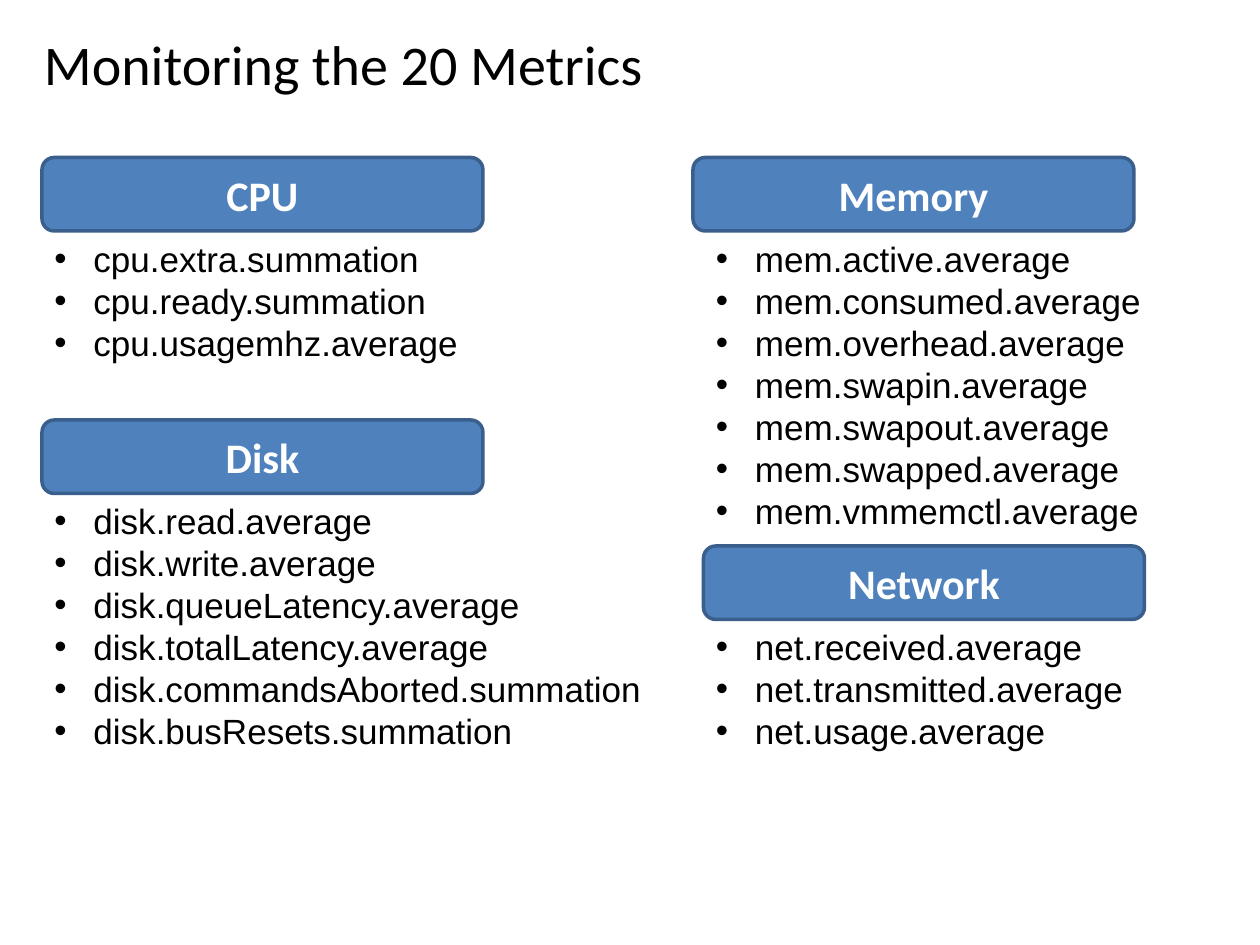
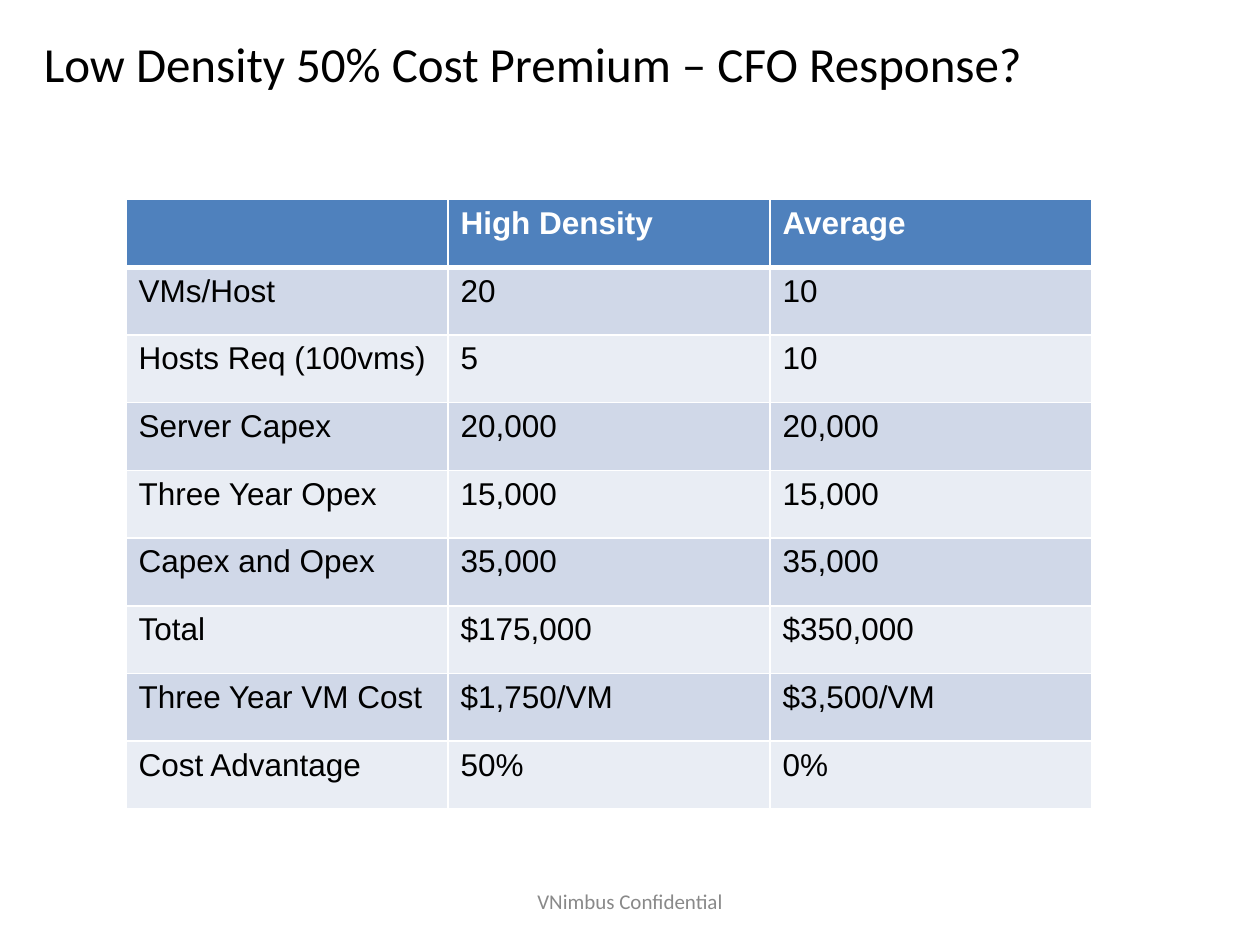
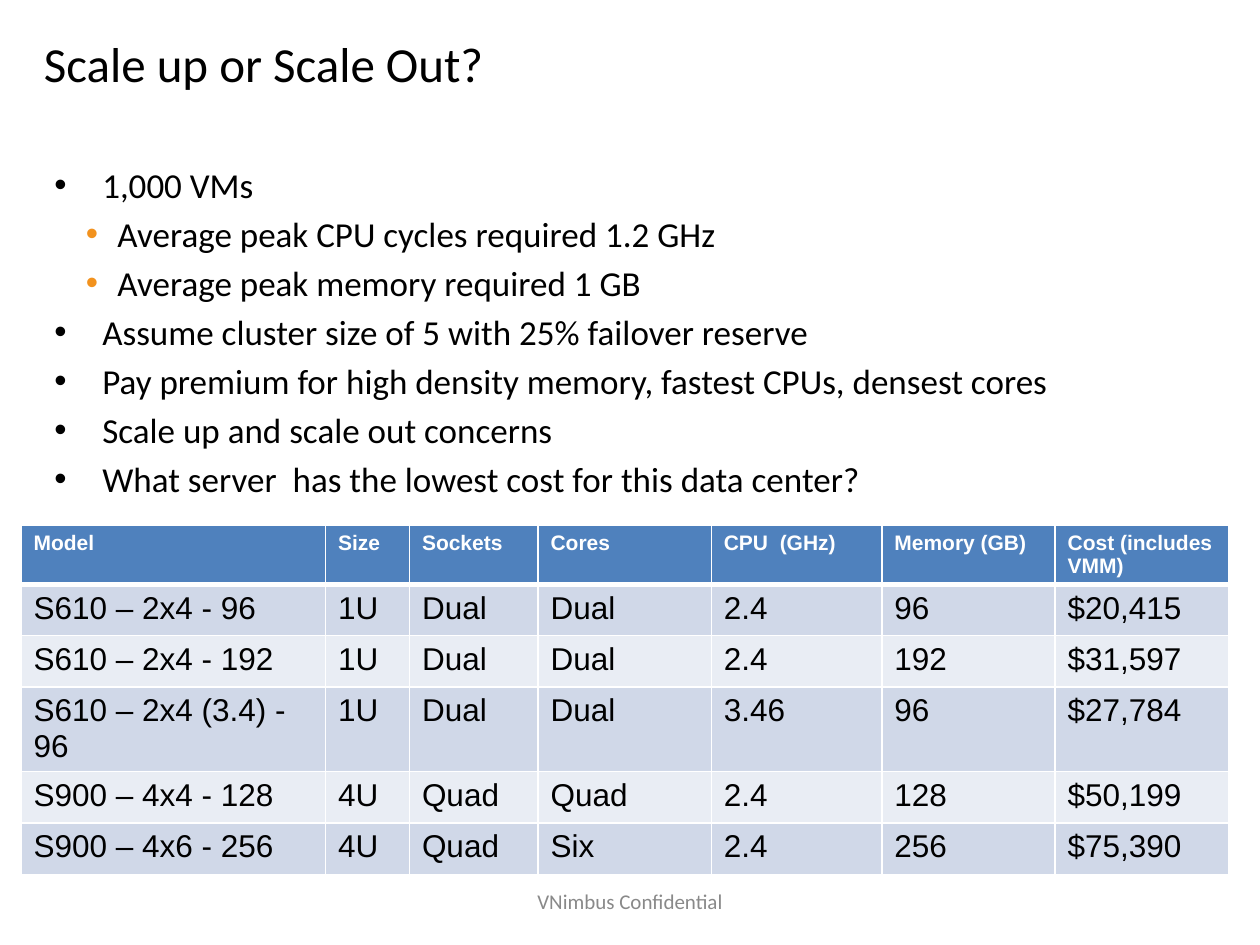
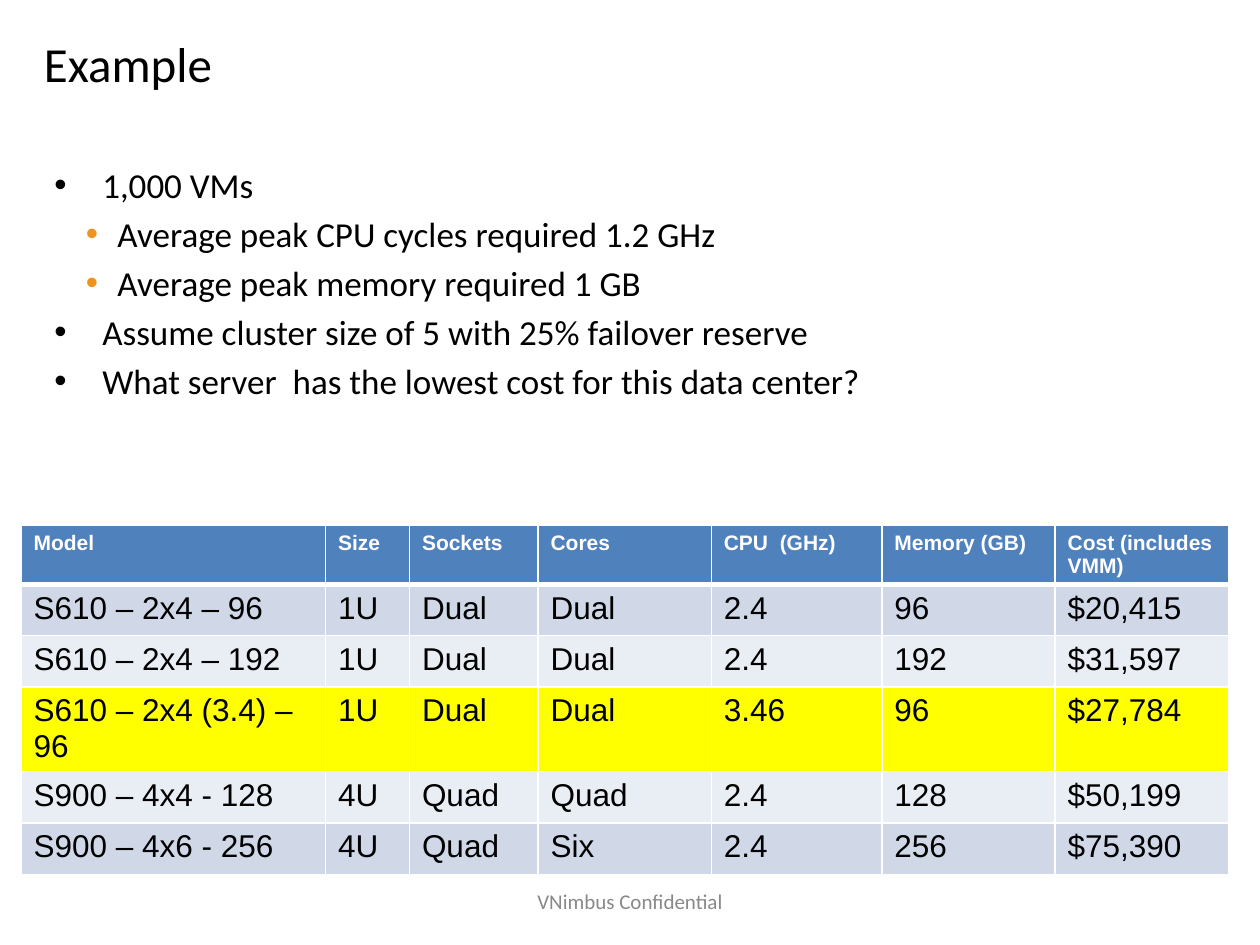
"""Build four slides on metrics, cost density and server choice."""
from lxml import etree
from pptx import Presentation
from pptx.dml.color import RGBColor
from pptx.enum.shapes import MSO_SHAPE
from pptx.enum.text import MSO_ANCHOR, PP_ALIGN
from pptx.oxml.ns import qn
from pptx.util import Inches, Pt

ROUND_RECT = MSO_SHAPE.ROUNDED_RECTANGLE
MIDDLE, TOP = MSO_ANCHOR.MIDDLE, MSO_ANCHOR.TOP
LEFT, CENTER = PP_ALIGN.LEFT, PP_ALIGN.CENTER

BLUE, BLUE_EDGE, ORANGE, YELLOW = "4F81BD", "3A5F8C", "F2921E", "FFFF00"
BLACK, WHITE, GRAY = "000000", "FFFFFF", "898989"
BANDS = ("D0D8E8", "E9EDF4")
COLUMNS, ROWS = 120, 90

METRICS = [
    ("CPU", 4, 15, 4, 46, "cpu",
     ["extra.summation", "ready.summation", "usagemhz.average"]),
    ("Memory", 66, 15, 67, 50, "mem",
     ["active.average", "consumed.average", "overhead.average", "swapin.average",
      "swapout.average", "swapped.average", "vmmemctl.average"]),
    ("Disk", 4, 40, 4, 64, "disk",
     ["read.average", "write.average", "queueLatency.average",
      "totalLatency.average", "commandsAborted.summation", "busResets.summation"]),
    ("Network", 67, 52, 67, 46, "net",
     ["received.average", "transmitted.average", "usage.average"]),
]
COSTS = [
    ("", "High Density", "Average"),
    ("VMs/Host", "20", "10"),
    ("Hosts Req (100vms)", "5", "10"),
    ("Server Capex", "20,000", "20,000"),
    ("Three Year Opex", "15,000", "15,000"),
    ("Capex and Opex", "35,000", "35,000"),
    ("Total", "$175,000", "$350,000"),
    ("Three Year VM Cost", "$1,750/VM", "$3,500/VM"),
    ("Cost Advantage", "50%", "0%"),
]
SERVER_HEAD = ("Model", "Size", "Sockets", "Cores", "CPU  (GHz)", "Memory (GB)",
               "Cost (includes VMM)")
SERVERS = [
    ("1U", "Dual", "Dual", "2.4", "96", "$20,415"),
    ("1U", "Dual", "Dual", "2.4", "192", "$31,597"),
    ("1U", "Dual", "Dual", "3.46", "96", "$27,784"),
    ("4U", "Quad", "Quad", "2.4", "128", "$50,199"),
    ("4U", "Quad", "Six", "2.4", "256", "$75,390"),
]
SERVER_WIDTHS = (29, 8, 12.25, 16.5, 16.25, 16.5, 16.5)
NEEDS = [
    ("1,000 VMs", 0),
    ("Average peak CPU cycles required 1.2 GHz", 1),
    ("Average peak memory required 1 GB", 1),
    ("Assume cluster size of 5 with 25% failover reserve", 0),
]
CONCERNS = [
    ("Pay premium for high density memory, fastest CPUs, densest cores", 0),
    ("Scale up and scale out concerns", 0),
]
QUESTION = [("What server  has the lowest cost for this data center?", 0)]


def rgb(color):
    """Turn a hex string into a colour."""
    return RGBColor.from_string(color)


def solid(parent, color):
    """Add a solid fill element to an XML parent."""
    fill = etree.SubElement(parent, qn("a:solidFill"))
    etree.SubElement(fill, qn("a:srgbClr"), val=color)


class Deck:
    """Hold the style and the current slide, and draw each kind of element."""

    def __init__(self):
        """Open a presentation on the grid."""
        self.prs = Presentation()
        self.prs.slide_width, self.prs.slide_height = Inches(10), Inches(7.5)
        self.s = None

    def x(self, columns):
        """Convert grid columns to a length."""
        return round(self.prs.slide_width * columns / COLUMNS)

    def y(self, rows):
        """Convert grid rows to a length."""
        return round(self.prs.slide_height * rows / ROWS)

    def box(self, left, top, width, height):
        """Convert a grid box to four lengths."""
        return self.x(left), self.y(top), self.x(width), self.y(height)

    def slide(self, title, size=28, width=105, footer=True):
        """Start a slide with its title and footer."""
        self.s = self.prs.slides.add_slide(self.prs.slide_layouts[6])
        self.text([title], (3, 0, width, 12), size, anchor=MIDDLE)
        if footer:
            self.text(["VNimbus Confidential"], (41, 83.4, 38, 4.8), 12,
                      color=GRAY, anchor=MIDDLE, align=CENTER)

    def style(self, p, size, font="Calibri", color=BLACK, bold=False):
        """Format the runs of a paragraph."""
        for r in p.runs:
            r.font.size, r.font.name, r.font.bold = Pt(size), font, bold
            r.font.color.rgb = rgb(color)

    def text(self, lines, box, size, font="Calibri", color=BLACK, anchor=TOP,
             align=LEFT):
        """Add a text box with one paragraph per line and return its paragraphs."""
        tf = self.s.shapes.add_textbox(*self.box(*box)).text_frame
        tf.word_wrap, tf.vertical_anchor = True, anchor
        tf.text = "\n".join(lines)
        for p in tf.paragraphs:
            p.alignment = align
            self.style(p, size, font, color)
        return tf.paragraphs

    def bullet(self, p, left, hang, color=BLACK):
        """Give a paragraph a hanging bullet."""
        pPr = p._p.get_or_add_pPr()
        pPr.set("marL", str(Inches(left)))
        pPr.set("indent", str(-Inches(hang)))
        clr = etree.SubElement(pPr, qn("a:buClr"))
        etree.SubElement(clr, qn("a:srgbClr"), val=color)
        etree.SubElement(pPr, qn("a:buFont"), typeface="Arial")
        etree.SubElement(pPr, qn("a:buChar"), char="•")

    def metrics(self, lines, box):
        """Add a plain bulleted list of metric names."""
        for p in self.text(lines, box, 20, "Arial"):
            self.bullet(p, 0.31, 0.31)

    def outline(self, items):
        """Add the body list with two levels."""
        paragraphs = self.text([line for line, _ in items], (4, 15, 111, 58.4), 20)
        for i, (p, (_, level)) in enumerate(zip(paragraphs, items)):
            p.level = level
            self.bullet(p, *((0.5, 0.25, ORANGE) if level else (0.38, 0.38)))
            if i:
                p.space_before = Pt(4)

    def heading(self, label, left, top):
        """Add a rounded group heading."""
        sp = self.s.shapes.add_shape(ROUND_RECT, *self.box(left, top, 42, 7))
        sp.shadow.inherit = False
        sp.fill.solid()
        sp.fill.fore_color.rgb = rgb(BLUE)
        sp.line.color.rgb, sp.line.width = rgb(BLUE_EDGE), Pt(2)
        tf = sp.text_frame
        tf.text, tf.vertical_anchor = label, MIDDLE
        p = tf.paragraphs[0]
        p.alignment = CENTER
        self.style(p, 24, color=WHITE, bold=True)

    def borders(self, cell, row):
        """Draw white cell borders, thick below the header."""
        tcPr = cell._tc.get_or_add_tcPr()
        for side in "LRTB":
            width = 3 if (row, side) in ((0, "B"), (1, "T")) else 1
            solid(etree.SubElement(tcPr, qn(f"a:ln{side}"), w=str(Pt(width))), WHITE)

    def table(self, rows, left, top, widths, height, head_size=18, marked=None):
        """Add a banded table, with one row marked if asked."""
        box = self.box(left, top, sum(widths), height * len(rows))
        tbl = self.s.shapes.add_table(len(rows), len(widths), *box).table
        for column, width in zip(tbl.columns, widths):
            column.width = self.x(width)
        for i, row in enumerate(rows):
            tbl.rows[i].height = self.y(height)
            head = i == 0
            fill = BLUE if head else YELLOW if i == marked else BANDS[(i - 1) % 2]
            for j, value in enumerate(row):
                cell = tbl.cell(i, j)
                self.borders(cell, i)
                cell.fill.solid()
                cell.fill.fore_color.rgb = rgb(fill)
                cell.margin_bottom = Inches(0.02)
                cell.text = value
                self.style(cell.text_frame.paragraphs[0], head_size if head else 18,
                           "Arial", WHITE if head else BLACK, head)

    def servers(self, dash, marked=None):
        """Add the server table, joining the first models with the given dash."""
        models = [f"S610 – 2x4 {dash} 96", f"S610 – 2x4 {dash} 192",
                  f"S610 – 2x4 (3.4) {dash} 96", "S900 – 4x4 - 128",
                  "S900 – 4x6 - 256"]
        rows = [(model, *data) for model, data in zip(models, SERVERS)]
        self.table([SERVER_HEAD, *rows], 2, 50, SERVER_WIDTHS, 4.9, 12, marked)


def main():
    """Build and save the slides."""
    deck = Deck()

    deck.slide("Monitoring the 20 Metrics", size=32, footer=False)
    for label, left, top, list_left, width, prefix, names in METRICS:
        deck.heading(label, left, top)
        deck.metrics([f"{prefix}.{name}" for name in names],
                     (list_left, top + 7, width, 1.2 + 4.04 * len(names)))

    deck.slide("Low Density 50% Cost Premium – CFO Response?", width=113)
    deck.table(COSTS, 12, 19, [92 / 3] * 3, 6.45)

    deck.slide("Scale up or Scale Out?")
    deck.outline(NEEDS + CONCERNS + QUESTION)
    deck.servers("-")

    deck.slide("Example")
    deck.outline(NEEDS + QUESTION)
    deck.servers("–", marked=3)

    deck.prs.save("out.pptx")


if __name__ == "__main__":
    main()
